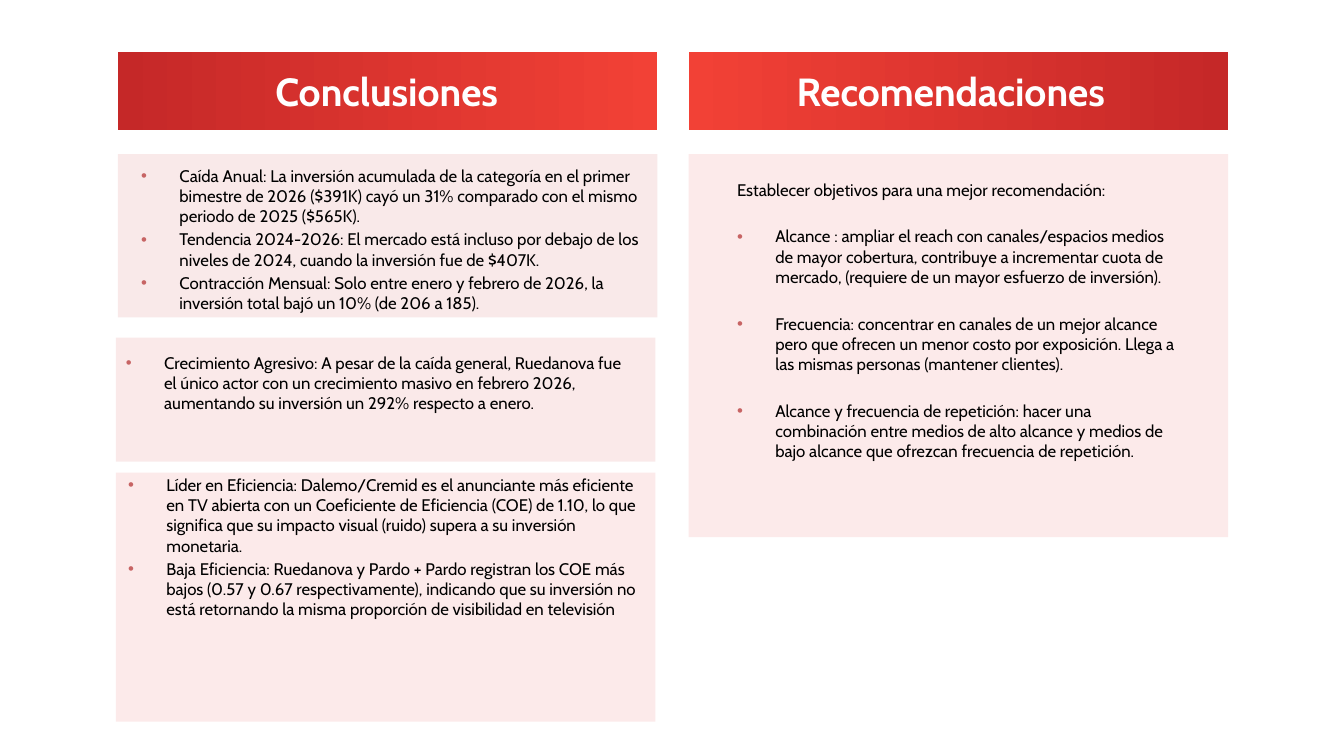
from dataclasses import dataclass

from lxml import etree
from pptx import Presentation
from pptx.dml.color import RGBColor
from pptx.enum.shapes import MSO_SHAPE
from pptx.enum.text import MSO_ANCHOR, MSO_AUTO_SIZE, PP_ALIGN
from pptx.oxml.ns import qn
from pptx.util import Pt

RECT = MSO_SHAPE.RECTANGLE
CENTER, LEFT = PP_ALIGN.CENTER, PP_ALIGN.LEFT
TOP, MIDDLE = MSO_ANCHOR.TOP, MSO_ANCHOR.MIDDLE
NO_FIT = MSO_AUTO_SIZE.NONE
COMPARISON = 4
PX = 9144  # 100 px to the inch


@dataclass(frozen=True)
class Theme:
    font: str = "Cabin"
    heading_size: int = 28
    body_size: int = 12
    dark: str = "C52828"
    middle: str = "D22F2F"
    bright: str = "E43834"
    light: str = "F24136"
    bullet: str = "C76464"
    text: str = "000000"
    heading: str = "FFFFFF"
    tint: int = 10  # opacity of the panels, percent


THEME = Theme()
COL_W, LEFT_X, RIGHT_X = 535, 117, 683
BAR_Y, BAR_H = 52, 77
INDENT = 38
TIGHT, LOOSE = 2.4, 19  # space before paragraphs, points

DECLINE = [
    "Caída Anual: La inversión acumulada de la categoría en el primer bimestre de 2026 "
    "($391K) cayó un 31% comparado con el mismo periodo de 2025 ($565K).",
    "Tendencia 2024-2026: El mercado está incluso por debajo de los niveles de 2024, "
    "cuando la inversión fue de $407K.",
    "Contracción Mensual: Solo entre enero y febrero de 2026, la inversión total bajó "
    "un 10% (de 206 a 185).",
]
GROWTH = [
    "Crecimiento Agresivo: A pesar de la caída general, Ruedanova fue el único actor con "
    "un crecimiento masivo en febrero 2026, aumentando su inversión un 292% respecto a enero.",
]
EFFICIENCY = [
    "Líder en Eficiencia: Dalemo/Cremid es el anunciante más eficiente en TV abierta con "
    "un Coeficiente de Eficiencia (COE) de 1.10, lo que significa que su impacto visual "
    "(ruido) supera a su inversión monetaria.",
    "Baja Eficiencia: Ruedanova y Pardo + Pardo registran los COE más bajos (0.57 y 0.67 "
    "respectivamente), indicando que su inversión no está retornando la misma proporción "
    "de visibilidad en televisión",
]
ADVICE_INTRO = "Establecer objetivos para una mejor recomendación:"
ADVICE = [
    "Alcance : ampliar el reach con canales/espacios medios de mayor cobertura, contribuye "
    "a incrementar cuota de mercado, (requiere de un mayor esfuerzo de inversión).",
    "Frecuencia: concentrar en canales de un mejor alcance pero que ofrecen un menor costo "
    "por exposición. Llega a las mismas personas (mantener clientes).",
    "Alcance y frecuencia de repetición: hacer una combinación entre medios de alto alcance "
    "y medios de bajo alcance que ofrezcan frecuencia de repetición.",
]


def rgb(color):
    return RGBColor.from_string(color)


def add_block(s, x, y, w, h):
    sp = s.shapes.add_shape(RECT, x * PX, y * PX, w * PX, h * PX)
    sp.shadow.inherit = False
    sp.line.fill.background()
    return sp


def add_bar(s, x, start, end):
    sp = add_block(s, x, BAR_Y, COL_W, BAR_H)
    sp.fill.gradient()
    sp.fill.gradient_angle = 0
    for stop, color in zip(sp.fill.gradient_stops, (start, end)):
        stop.color.rgb = rgb(color)


def add_panel(s, x, y, h, color):
    sp = add_block(s, x, y, COL_W, h)
    sp.fill.solid()
    sp.fill.fore_color.rgb = rgb(color)
    clr = sp.fill._xPr.find(".//" + qn("a:srgbClr"))
    etree.SubElement(clr, qn("a:alpha"), val=str(THEME.tint * 1000))


def place(s, sp, x, y, w, h, anchor):
    """Set the frame, bring it to the front and return its text frame."""
    sp.left, sp.top, sp.width, sp.height = (v * PX for v in (x, y, w, h))
    s.shapes.element.append(sp.element)
    tf = sp.text_frame
    tf.auto_size = NO_FIT
    tf.word_wrap = True
    tf.vertical_anchor = anchor
    return tf


def set_bullet(p, bulleted):
    pPr = p._p.get_or_add_pPr()
    indent = INDENT * PX if bulleted else 0
    pPr.set("marL", str(indent))
    pPr.set("indent", str(-indent))
    if bulleted:
        clr = etree.SubElement(pPr, qn("a:buClr"))
        etree.SubElement(clr, qn("a:srgbClr"), val=THEME.bullet)
        etree.SubElement(pPr, qn("a:buFont"), typeface="Arial")
        etree.SubElement(pPr, qn("a:buChar"), char="•")
    else:
        etree.SubElement(pPr, qn("a:buNone"))


def write(p, text, size, color, bold=False, align=LEFT, bulleted=False, before=0):
    set_bullet(p, bulleted)
    p.alignment = align
    p.line_spacing = 1.0
    p.space_before, p.space_after = Pt(before), Pt(0)
    r = p.add_run()
    r.text = text
    r.font.name, r.font.size, r.font.bold = THEME.font, Pt(size), bold
    r.font.color.rgb = rgb(color)


def fill_heading(s, sp, x, w, text):
    tf = place(s, sp, x, 62, w, 57, MIDDLE)
    tf.word_wrap = False
    write(tf.paragraphs[0], text, THEME.heading_size, THEME.heading, True, CENTER)


def fill_list(s, sp, box, items, gap=TIGHT, intro=None):
    tf = place(s, sp, *box, TOP)
    lines = [(intro, False)] if intro else []
    lines += [(item, True) for item in items]
    for i, (text, bulleted) in enumerate(lines):
        p = tf.add_paragraph() if i else tf.paragraphs[0]
        write(p, text, THEME.body_size, THEME.text, bulleted=bulleted, before=gap if i else 0)


def main():
    prs = Presentation()
    prs.slide_width, prs.slide_height = 1333 * PX, 750 * PX
    s = prs.slides.add_slide(prs.slide_layouts[COMPARISON])
    ph = {sp.placeholder_format.idx: sp for sp in s.placeholders}

    # Heading bars
    add_bar(s, LEFT_X, THEME.dark, THEME.light)
    add_bar(s, RIGHT_X, THEME.light, THEME.dark)

    # Tinted panels
    add_panel(s, LEFT_X, 153, 162, THEME.dark)
    add_panel(s, LEFT_X - 2, 335, 123, THEME.middle)
    add_panel(s, LEFT_X - 2, 469, 247, THEME.bright)
    add_panel(s, RIGHT_X, 153, 380, THEME.bright)

    # Conclusions
    fill_heading(s, ph[0], 261, 245, "Conclusiones")
    fill_list(s, ph[1], (130, 159, 515, 160), DECLINE)
    growth = s.shapes.add_textbox(0, 0, PX, PX)
    fill_list(s, growth, (115, 345, 515, 71), GROWTH)
    fill_list(s, ph[2], (117, 466, 528, 156), EFFICIENCY)

    # Recommendations
    fill_heading(s, ph[3], 778, 330, "Recomendaciones")
    fill_list(s, ph[4], (721, 173, 459, 332), ADVICE, LOOSE, ADVICE_INTRO)

    prs.save("out.pptx")


if __name__ == "__main__":
    main()
